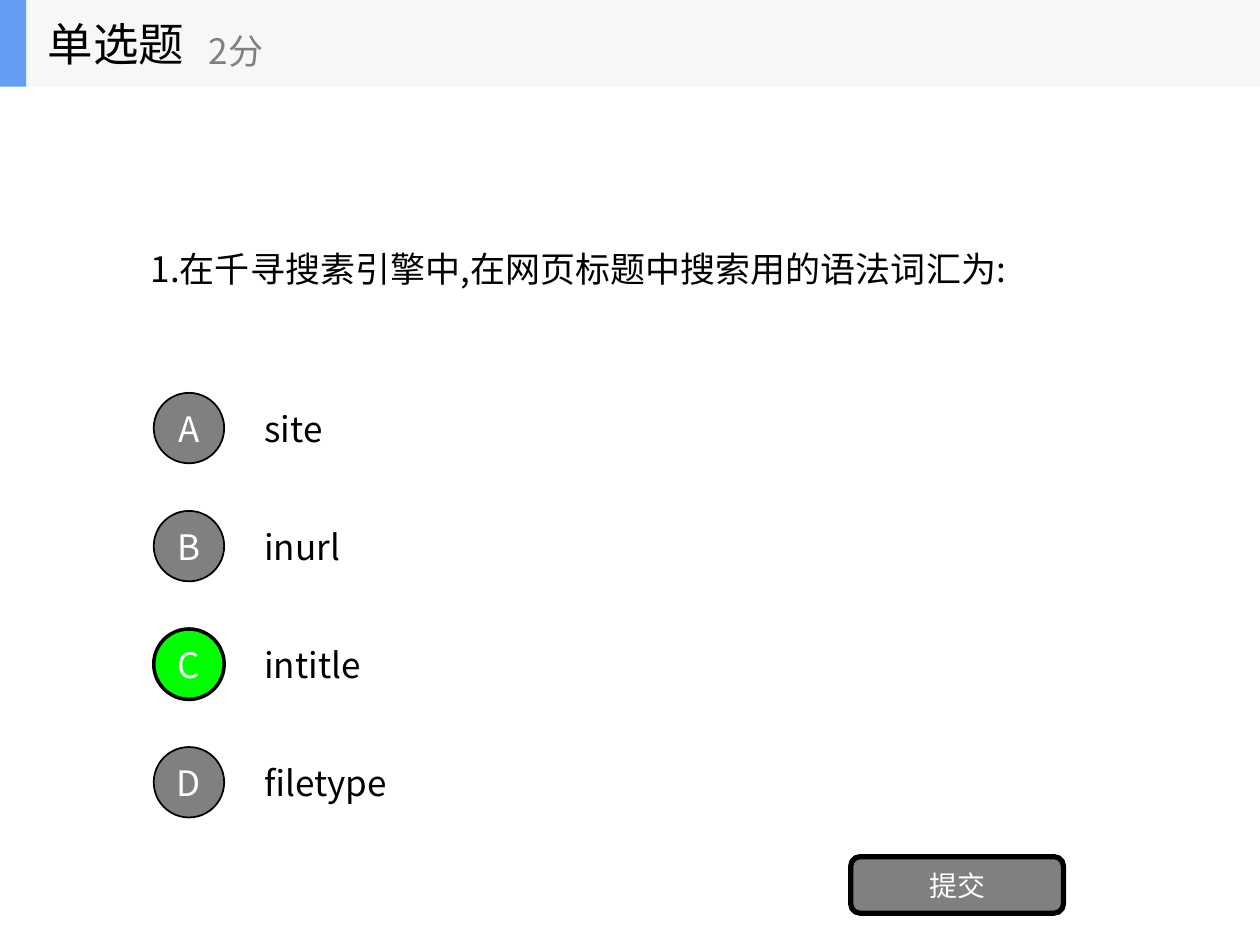
"""Build a single-choice quiz slide with four options and a submit button."""
from dataclasses import dataclass

from lxml.etree import SubElement
from pptx import Presentation
from pptx.dml.color import RGBColor as RGB
from pptx.enum.shapes import MSO_SHAPE as Shape
from pptx.enum.text import MSO_ANCHOR as Anchor, PP_ALIGN as Align
from pptx.oxml.ns import qn
from pptx.util import Cm, Pt

HEADING = "单选题"
POINTS = "2分"
QUESTION = "1.在千寻搜素引擎中,在网页标题中搜索用的语法词汇为:"
OPTIONS = [("A", "site"), ("B", "inurl"), ("C", "intitle"), ("D", "filetype")]
ANSWER = "C"
SUBMIT = "提交"


@dataclass(frozen=True)
class Theme:
    font: str = "Noto Sans CJK SC"
    ink: str = "000000"
    muted: str = "808080"
    light: str = "FFFFFF"
    correct: str = "00FF00"
    band: str = "F6F7F8"
    accent: str = "639EF4"
    heading: int = 26
    body: int = 20
    button: int = 16


THEME = Theme()
SLIDE_W, SLIDE_H = 25.4, 19.05
HEADER_H = 1.75
MARKER_X, MARKER_TOP, MARKER_SIZE = 3.1, 7.92, 1.42
OPTION_X, OPTION_W, OPTION_PITCH = 5.08, 4.04, 2.38
TEXT_H = 1.12


def write(part, words, size, color, align=Align.LEFT):
    frame = part.text_frame
    frame.word_wrap = True
    frame.vertical_anchor = Anchor.MIDDLE
    paragraph = frame.paragraphs[0]
    paragraph.alignment = align
    run = paragraph.add_run()
    run.text = words
    run.font.name = THEME.font
    run.font.size = Pt(size)
    run.font.color.rgb = RGB.from_string(color)
    SubElement(run.font._element, qn("a:ea"), typeface=THEME.font)
    return frame


def add_label(slide, box, words, size, color):
    label = slide.shapes.add_textbox(*map(Cm, box))
    write(label, words, size, color)


def add_block(slide, kind, box, fill, border=0):
    block = slide.shapes.add_shape(kind, *map(Cm, box))
    block.shadow.inherit = False
    block.fill.solid()
    block.fill.fore_color.rgb = RGB.from_string(fill)
    if border:
        block.line.color.rgb = RGB.from_string(THEME.ink)
        block.line.width = Pt(border)
    else:
        block.line.fill.background()
    return block


def add_option(slide, index, letter, answer):
    top = MARKER_TOP + index * OPTION_PITCH
    text_top = top + (MARKER_SIZE - TEXT_H) / 2
    add_label(slide, (OPTION_X, text_top, OPTION_W, TEXT_H), answer, THEME.body, THEME.ink)
    fill, border = (THEME.correct, 2) if letter == ANSWER else (THEME.muted, 1)
    marker = add_block(slide, Shape.OVAL, (MARKER_X, top, MARKER_SIZE, MARKER_SIZE), fill, border)
    frame = write(marker, letter, THEME.body, THEME.light, Align.CENTER)
    frame.margin_left = frame.margin_right = 0


def add_header(slide):
    add_block(slide, Shape.RECTANGLE, (0, 0, SLIDE_W, HEADER_H), THEME.band)
    add_block(slide, Shape.RECTANGLE, (0, 0, 0.53, HEADER_H), THEME.accent)
    add_label(slide, (0.71, 0, 5.28, HEADER_H), HEADING, THEME.heading, THEME.ink)
    add_label(slide, (3.96, 0.3, 6.35, 1.42), POINTS, THEME.body, THEME.muted)


def main():
    deck = Presentation()
    deck.slide_width, deck.slide_height = Cm(SLIDE_W), Cm(SLIDE_H)
    slide = deck.slides.add_slide(deck.slide_layouts[6])
    add_label(slide, (2.79, 4.85, 19.84, TEXT_H), QUESTION, THEME.body, THEME.ink)
    for index, (letter, answer) in enumerate(OPTIONS):
        add_option(slide, index, letter, answer)
    submit = add_block(slide, Shape.ROUNDED_RECTANGLE, (17.15, 17.27, 4.29, 1.14), THEME.muted, 3)
    write(submit, SUBMIT, THEME.button, THEME.light, Align.CENTER)
    add_header(slide)
    deck.save("out.pptx")


if __name__ == "__main__":
    main()
